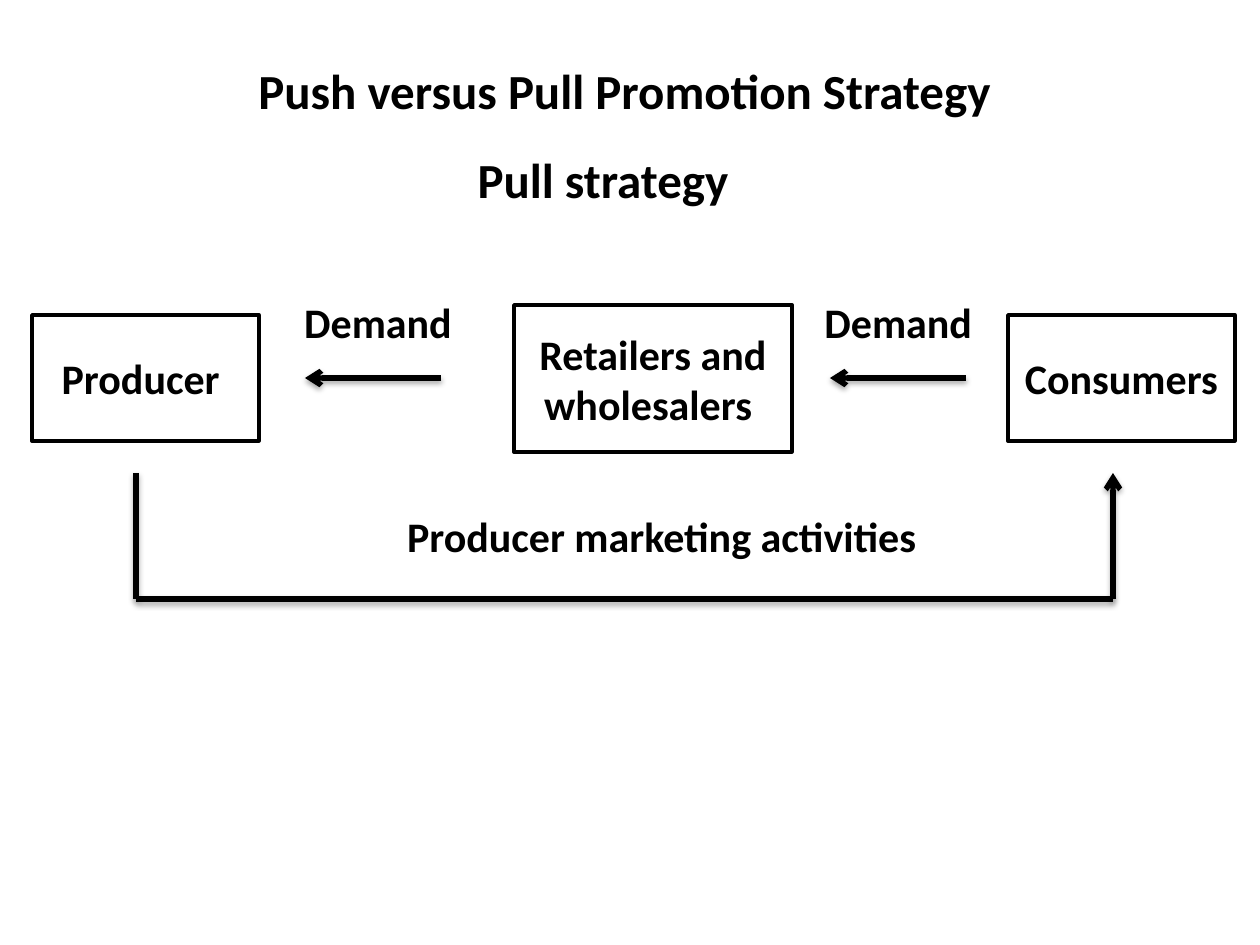
from lxml import etree
from pptx import Presentation
from pptx import util as u
from pptx.dml.color import RGBColor
from pptx.enum import shapes, text
from pptx.oxml import ns

SCALE = 914400 / 126


def px(length):
    return u.Emu(round(length * SCALE))


def colour(code):
    return RGBColor.from_string(code)


class Diagram:
    ink, paper = "000000", "FFFFFF"
    font = {"name": "Calibri", "bold": True}
    frame = {"word_wrap": True, "vertical_anchor": text.MSO_ANCHOR.MIDDLE}

    def __init__(self, slide):
        self.slide = slide

    def caption(self, holder, words, size):
        for key, value in self.frame.items():
            setattr(holder.text_frame, key, value)
        paragraph = holder.text_frame.paragraphs[0]
        paragraph.alignment = text.PP_ALIGN.CENTER
        run = paragraph.add_run()
        run.text = words
        for key, value in {**self.font, "size": u.Pt(size)}.items():
            setattr(run.font, key, value)
        run.font.color.rgb = colour(self.ink)

    def stroke(self, line, width):
        line.color.rgb = colour(self.ink)
        line.width = u.Pt(width)

    def label(self, words, *place, size=24):
        holder = self.slide.shapes.add_textbox(*map(px, place))
        self.caption(holder, words, size)

    def party(self, words, *place):
        box = self.slide.shapes.add_shape(shapes.MSO_SHAPE.RECTANGLE, *map(px, place))
        box.shadow.inherit = False
        box.fill.solid()
        box.fill.fore_color.rgb = colour(self.paper)
        self.stroke(box.line, 2)
        self.caption(box, words, 24)

    def flow(self, start, end, arrow=False):
        link = self.slide.shapes.add_connector(
            shapes.MSO_CONNECTOR.STRAIGHT, *map(px, start + end))
        self.stroke(link.line, 3)
        properties = link._element.spPr
        if arrow:
            etree.SubElement(properties.find(ns.qn("a:ln")), ns.qn("a:tailEnd"), type="arrow")
        effects = etree.SubElement(properties, ns.qn("a:effectLst"))
        shadow = etree.SubElement(effects, ns.qn("a:outerShdw"), blurRad="40000",
                                  dist="23000", dir="5400000", rotWithShape="0")
        tint = etree.SubElement(shadow, ns.qn("a:srgbClr"), val=self.ink)
        etree.SubElement(tint, ns.qn("a:alpha"), val="35000")


def main():
    deck = Presentation()
    deck.slide_width, deck.slide_height = px(1260), px(945)
    diagram = Diagram(deck.slides.add_slide(deck.slide_layouts[6]))

    diagram.label("Producer marketing activities ", 378, 504, 577, 63)
    for words, left in (("Demand", 252), ("Demand ", 777)):
        diagram.label(words, left, 284, 252, 76)

    diagram.party("Producer ", 32, 315, 227, 126)
    diagram.party("Retailers and wholesalers ", 514, 305, 278, 147)
    diagram.party("Consumers ", 1008, 315, 227, 126)

    for right in (441, 966):
        diagram.flow((right, 378), (right - 136, 378), arrow=True)

    corners = [(136, 473), (136, 599), (1113, 599), (1113, 473)]
    for start, end in zip(corners, corners[1:]):
        diagram.flow(start, end, arrow=end == corners[-1])

    diagram.label("Pull strategy ", 451, 147, 315, 63, size=28)
    diagram.label("Push versus Pull Promotion Strategy ", 63, 42, 1134, 95, size=28)
    deck.save("out.pptx")


if __name__ == "__main__":
    main()
